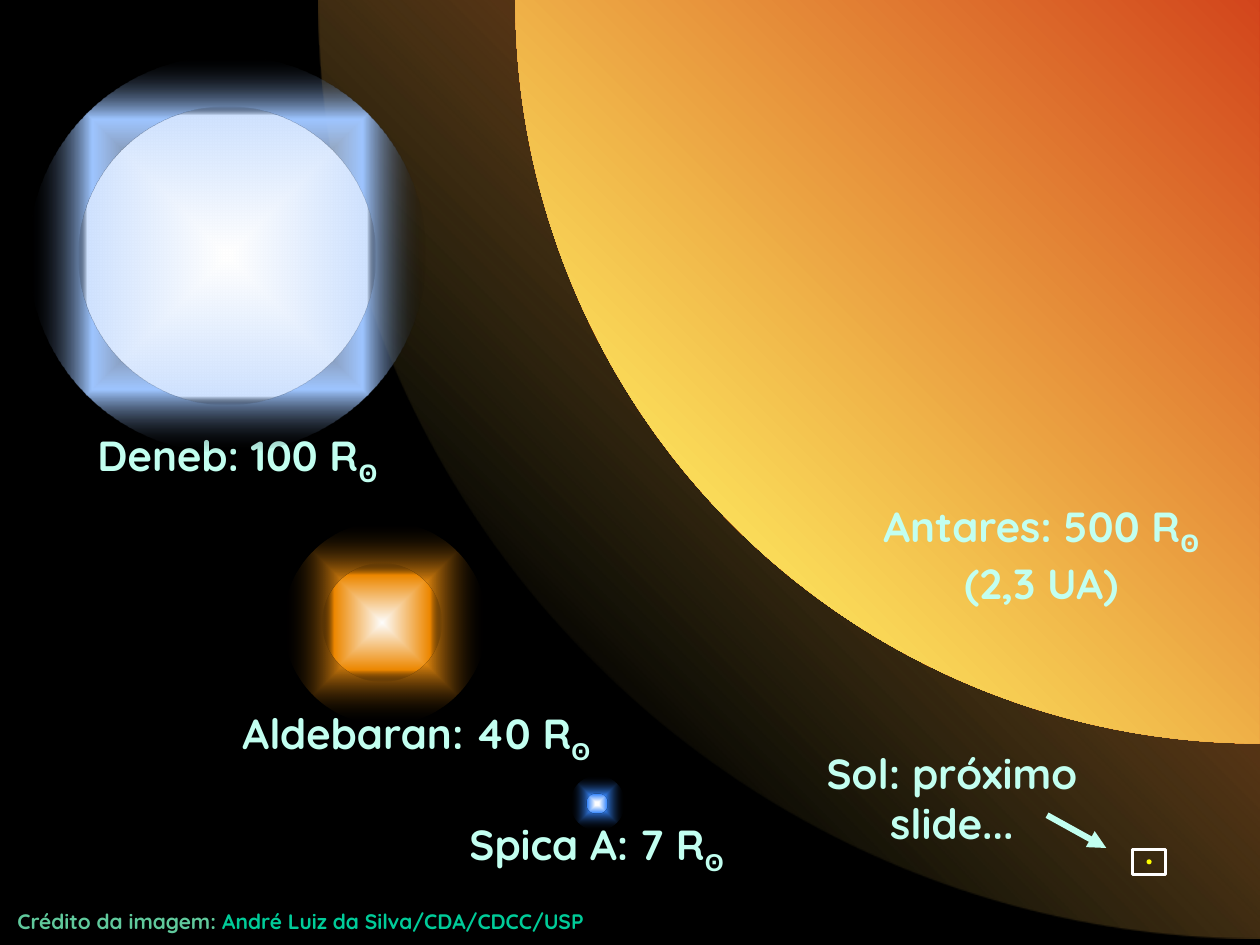
from pptx import Presentation, util as u
from pptx.dml.color import RGBColor
from pptx.enum import shapes, text
from pptx.oxml import parse_xml
from pptx.oxml.ns import nsdecls, qn

COLORS = {
    "space": "000000", "label": "C2FFF0", "credit": "60C99C",
    "author": "00CC99", "frame": "FFFFFF", "sun": "FFFF00",
}
CENTER = {"l": 50, "t": 50, "r": 50, "b": 50}
CORNER = {"l": 0, "t": 100, "r": 100, "b": 0}
SUN = "ʘ"


class StarSlide:
    def __init__(self, prs):
        self.font = "Quicksand"
        self.s = prs.slides.add_slide(prs.slide_layouts[6])
        fill = self.s.background.fill
        fill.solid()
        fill.fore_color.rgb = self.rgb("space")

    def rgb(self, name):
        return RGBColor.from_string(COLORS[name])

    def shape(self, kind, x, y, w, h, parent=None):
        """Add a preset shape with no fill, line or shadow."""
        sp = (parent or self.s).shapes.add_shape(
            kind, *(u.Inches(v) for v in (x, y, w, h)))
        sp.shadow.inherit = False
        sp.fill.background()
        sp.line.fill.background()
        return sp

    def gradient(self, sp, stops, path, focus):
        """Fill with a path gradient; a stop is (position, colour[, opacity])."""
        gs = ""
        for pos, color, *opacity in stops:
            alpha = "".join(f'<a:alpha val="{a * 1000}"/>' for a in opacity)
            gs += (f'<a:gs pos="{pos * 1000}"><a:srgbClr val="{color}">'
                   f'{alpha}</a:srgbClr></a:gs>')
        rect = " ".join(f'{k}="{v * 1000}"' for k, v in focus.items() if v)
        grad = parse_xml(
            f'<a:gradFill {nsdecls("a")} rotWithShape="1"><a:gsLst>{gs}</a:gsLst>'
            f'<a:path path="{path}"><a:fillToRect {rect}/></a:path></a:gradFill>')
        sp_pr = sp._element.spPr
        sp_pr.replace(sp_pr.find(qn("a:noFill")), grad)

    def star(self, *discs):
        """Group a glow and a body, each given as (x, y, size, stops)."""
        group = self.s.shapes.add_group_shape()
        for x, y, d, stops in discs:
            sp = self.shape(shapes.MSO_SHAPE.OVAL, x, y, d, d, group)
            self.gradient(sp, stops, "shape", CENTER)

    def giant(self, *discs):
        """Group quarter discs that spread from the top right corner."""
        group = self.s.shapes.add_group_shape()
        for x, y, d, stops in discs:
            sp = self.shape(shapes.MSO_SHAPE.ARC, x, y, d, d, group)
            sp.rotation = 180
            self.gradient(sp, stops, "circle", CORNER)

    def textbox(self, x, y, w, h):
        tf = self.s.shapes.add_textbox(*(u.Inches(v) for v in (x, y, w, h))).text_frame
        tf.word_wrap = True
        tf.auto_size = text.MSO_AUTO_SIZE.SHAPE_TO_FIT_TEXT
        return tf

    def run(self, p, words, size, color, font=None):
        r = p.add_run()
        r.text = words
        r.font.size = u.Pt(size)
        r.font.bold = True
        r.font.name = font or self.font
        r.font.color.rgb = self.rgb(color)
        return r

    def label(self, x, y, h, *lines, sun_font=None):
        """Add a centred label; the sun sign is set as a subscript."""
        tf = self.textbox(x, y, 3.07, h)
        for i, line in enumerate(lines):
            p = tf.add_paragraph() if i else tf.paragraphs[0]
            p.alignment = text.PP_ALIGN.CENTER
            words, sign, _ = line.partition(SUN)
            self.run(p, words, 24, "label")
            if sign:
                r = self.run(p, sign, 24, "label", sun_font)
                r._r.get_or_add_rPr().set("baseline", "-25000")

    def credit(self, x, y, w, h, *runs):
        p = self.textbox(x, y, w, h).paragraphs[0]
        for words, color in runs:
            self.run(p, words, 12, color)

    def frame(self, x, y, w, h):
        sp = self.shape(shapes.MSO_SHAPE.RECTANGLE, x, y, w, h)
        sp.line.color.rgb = self.rgb("frame")
        sp.line.width = u.Pt(1.5)

    def arrow(self, *ends):
        c = self.s.shapes.add_connector(
            shapes.MSO_CONNECTOR.STRAIGHT, *(u.Inches(v) for v in ends))
        c.line.color.rgb = self.rgb("label")
        c.line.width = u.Pt(3.5)
        c.line._get_or_add_ln().append(
            parse_xml(f'<a:tailEnd {nsdecls("a")} type="triangle"/>'))
        c._element.spPr.append(parse_xml(f'<a:effectLst {nsdecls("a")}/>'))

    def dot(self, x, y, d):
        sp = self.shape(shapes.MSO_SHAPE.OVAL, x, y, d, d)
        sp.fill.solid()
        sp.fill.fore_color.rgb = self.rgb("sun")


def main():
    prs = Presentation()
    prs.slide_width, prs.slide_height = u.Inches(10), u.Inches(7.5)
    s = StarSlide(prs)
    fade = (100, "000000", 0)

    # Aldebaran
    s.star((2.25, 4.14, 1.61, [(11, "FFFFFF", 0), (36, "FF9810"), fade]),
           (2.56, 4.47, 0.94, [(0, "FFFFFF"), (80, "EE8800"), fade]))
    s.credit(0.04, 7.16, 4.92, 0.3, ("Crédito da imagem: ", "credit"),
             ("André Luiz da Silva/CDA/CDCC/USP", "author"))
    # Antares
    s.giant((2.53, -7.51, 14.96,
             [(13, "FDE65D", 0), (56, "C00000", 94), (71, "FE732F", 0)]),
            (4.09, -5.91, 11.81, [(12, "FDE65D"), (66, "C00000")]))
    s.label(6.73, 3.92, 1.18, "Antares: 500 Rʘ", "(2,3 UA)")
    # Spica A
    s.star((4.53, 6.16, 0.43, [(11, "69D8FF", 0), (25, "3788FF"), fade]),
           (4.66, 6.3, 0.16, [(17, "FFFFFF"), (92, "3788FF"), fade]))
    # Sun
    s.frame(8.99, 6.74, 0.26, 0.2)
    s.arrow(8.31, 6.47, 8.78, 6.73)
    s.dot(9.1, 6.82, 0.04)

    s.label(0.35, 3.36, 0.5, "Deneb: 100 Rʘ")
    s.label(1.77, 5.57, 0.77, "Aldebaran: 40 Rʘ", sun_font="Arial")
    s.label(3.2, 6.45, 0.77, "Spica A: 7 Rʘ", sun_font="Arial")
    s.label(6.02, 5.88, 1.18, "Sol: próximo slide...")
    # Deneb
    s.star((0.23, 0.44, 3.15, [(7, "FFFFFF", 0), (68, "9EC5FF"), fade]),
           (0.62, 0.85, 2.36, [(3, "FFFFFF"), (94, "CFE2FF"), fade]))
    prs.save("out.pptx")


if __name__ == "__main__":
    main()
